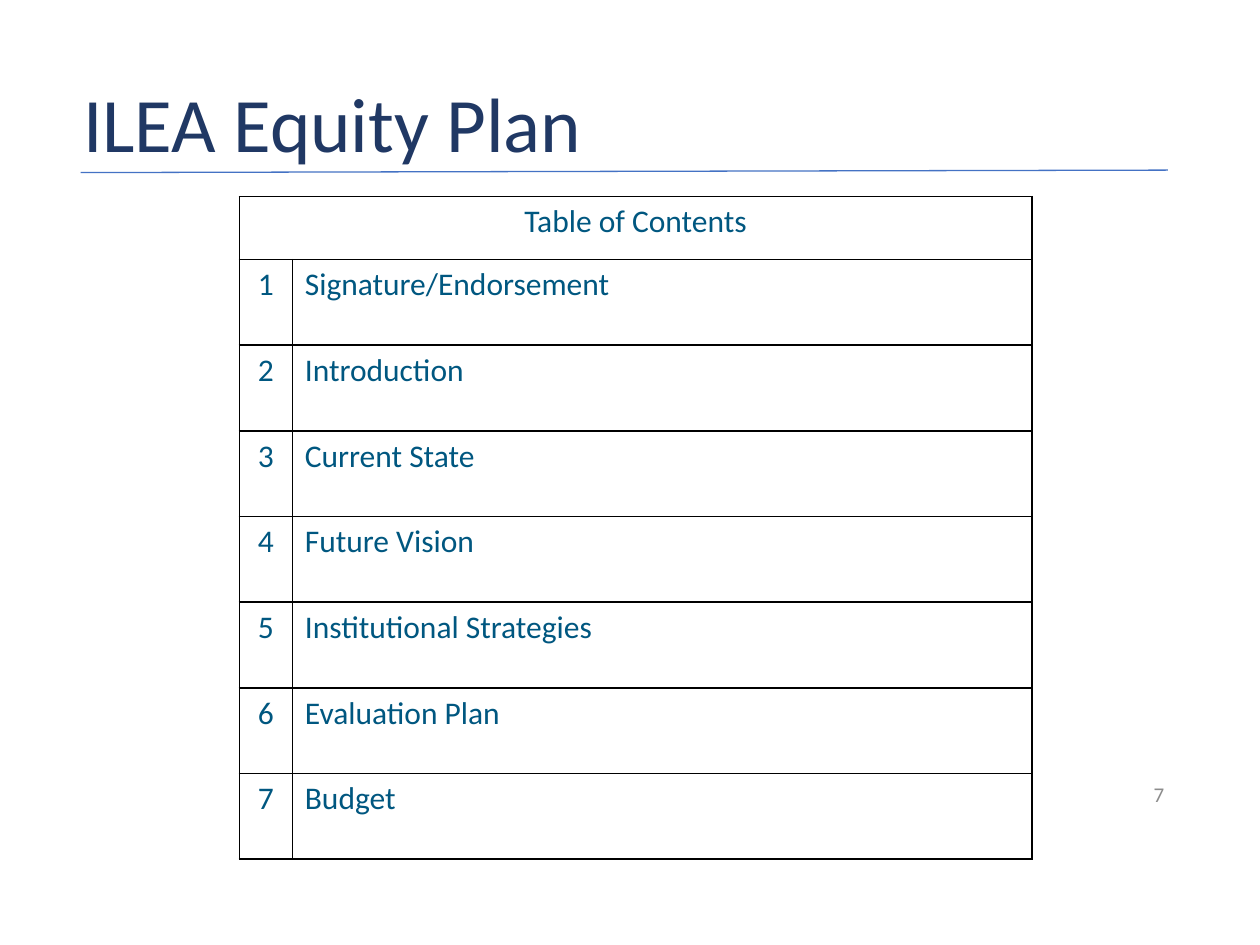
"""Build the ILEA Equity Plan table of contents slide."""
from dataclasses import dataclass

import pptx
import pptx.dml.color
import pptx.enum.shapes
import pptx.enum.text
import pptx.oxml
import pptx.oxml.ns
import pptx.util
from lxml import etree

Inches = pptx.util.Inches
RGBColor = pptx.dml.color.RGBColor
Align = pptx.enum.text.PP_ALIGN

NAVY = RGBColor(0x20, 0x38, 0x64)
BLUE = RGBColor(0x44, 0x72, 0xC4)
TEAL = RGBColor(0x00, 0x57, 0x80)
GRAY = RGBColor(0x8C, 0x8C, 0x8C)
BLACK = RGBColor(0x00, 0x00, 0x00)

HEADING = "Table of Contents"
SECTIONS = [
    "Signature/Endorsement",
    "Introduction",
    "Current State",
    "Future Vision",
    "Institutional Strategies",
    "Evaluation Plan",
    "Budget",
]
COL_WIDTHS = (0.42, 5.87)
HEADER_HEIGHT, ROW_HEIGHT = 0.5, 0.68


@dataclass
class Style:
    size: float
    color: RGBColor
    align: Align = Align.LEFT
    line_spacing: float = 1.0


@dataclass
class Label:
    text: str
    left: float
    top: float
    width: float
    height: float
    style: Style


LABELS = [
    Label("ILEA Equity Plan", 0.59, 0.47, 8.62, 1.09, Style(44, NAVY, line_spacing=0.9)),
    Label("7", 7.06, 6.15, 2.25, 0.3, Style(12, GRAY, Align.RIGHT)),
]
NUMBER = Style(18, TEAL, Align.CENTER)
ENTRY = Style(18, TEAL)


def write(tf, text: str, style: Style) -> None:
    p = tf.paragraphs[0]
    p.alignment = style.align
    p.line_spacing = style.line_spacing
    r = p.add_run()
    r.text = text
    for name, value in {"name": "Calibri", "size": pptx.util.Pt(style.size)}.items():
        setattr(r.font, name, value)
    r.font.color.rgb = style.color


def add_label(s, label: Label) -> None:
    box = (label.left, label.top, label.width, label.height)
    tf = s.shapes.add_textbox(*map(Inches, box)).text_frame
    frame = {
        "word_wrap": True,
        "vertical_anchor": pptx.enum.text.MSO_ANCHOR.MIDDLE,
        "margin_left": Inches(0.07),
        "margin_right": Inches(0.07),
        "margin_top": Inches(0.04),
        "margin_bottom": Inches(0.04),
    }
    for name, value in frame.items():
        setattr(tf, name, value)
    write(tf, label.text, label.style)


def add_rule(s) -> None:
    ends = map(Inches, (0.64, 1.37, 9.27, 1.35))
    sp = s.shapes.add_connector(pptx.enum.shapes.MSO_CONNECTOR.STRAIGHT, *ends)
    sp.line.color.rgb = BLUE
    sp.line.width = pptx.util.Pt(0.75)
    etree.SubElement(sp._element.spPr, pptx.oxml.ns.qn("a:effectLst"))


def format_cell(cell) -> None:
    tc_pr = cell._tc.get_or_add_tcPr()
    for side in ("lnL", "lnR", "lnT", "lnB"):
        tc_pr.append(pptx.oxml.parse_xml(
            f'<a:{side} {pptx.oxml.ns.nsdecls("a")} w="{pptx.util.Pt(1)}">'
            f'<a:solidFill><a:srgbClr val="{BLACK}"/></a:solidFill></a:{side}>'))
    cell.fill.background()


def add_contents(s) -> None:
    heights = [HEADER_HEIGHT] + [ROW_HEIGHT] * len(SECTIONS)
    size = (sum(COL_WIDTHS), sum(heights))
    frame = s.shapes.add_table(
        len(heights), len(COL_WIDTHS), Inches(1.9), Inches(1.56), *map(Inches, size))
    table = frame.table
    table.first_row = table.horz_banding = False
    for column, width in zip(table.columns, COL_WIDTHS):
        column.width = Inches(width)
    for row, height in zip(table.rows, heights):
        row.height = Inches(height)
    for cell in table.iter_cells():
        format_cell(cell)
    table.cell(0, 0).merge(table.cell(0, 1))
    write(table.cell(0, 0).text_frame, HEADING, NUMBER)
    for i, section in enumerate(SECTIONS, start=1):
        write(table.cell(i, 0).text_frame, str(i), NUMBER)
        write(table.cell(i, 1).text_frame, section, ENTRY)


def main() -> None:
    prs = pptx.Presentation()
    prs.slide_width, prs.slide_height = Inches(10), Inches(7.5)
    s = prs.slides.add_slide(prs.slide_layouts[6])
    for label in LABELS:
        add_label(s, label)
    add_rule(s)
    add_contents(s)
    prs.save("out.pptx")


if __name__ == "__main__":
    main()
